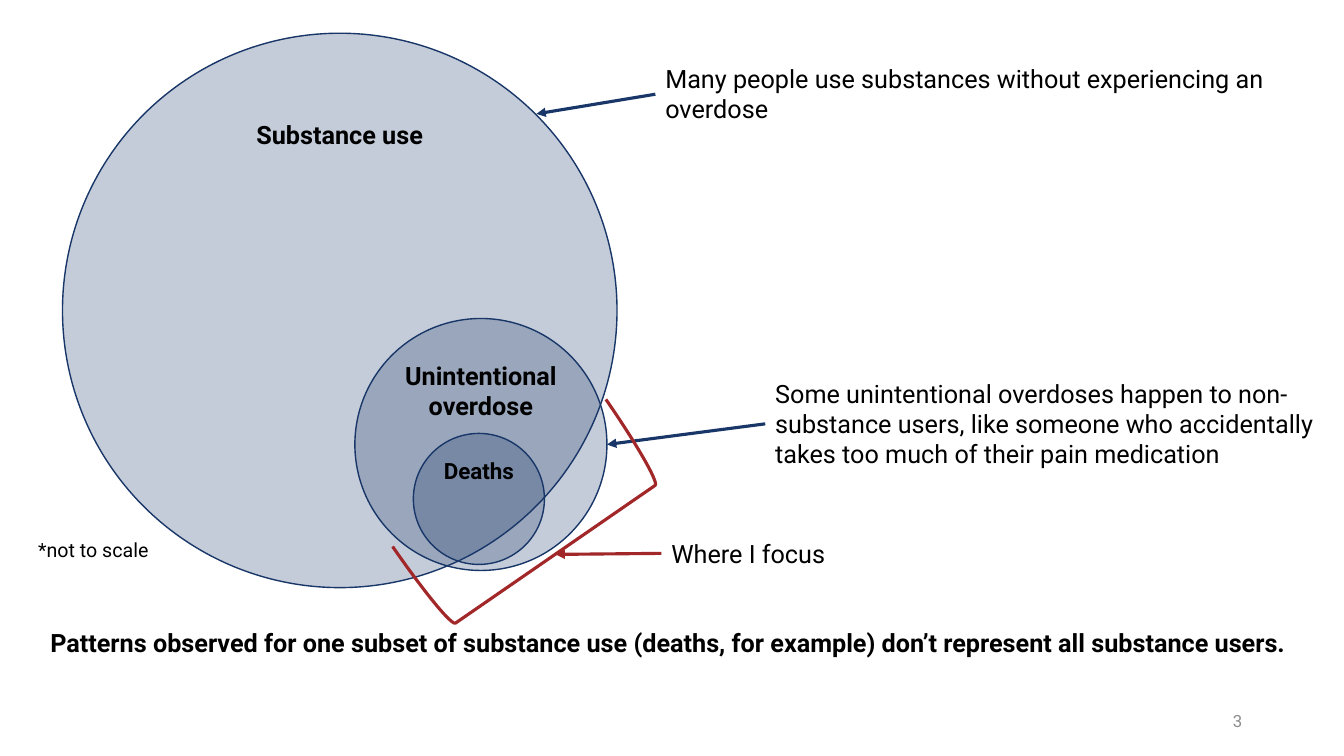
from lxml import etree
from pptx import Presentation
from pptx import util as u
from pptx.dml.color import RGBColor
from pptx.enum import shapes, text
from pptx.oxml import ns

PX = 9144  # EMU per px, 100 px to the inch
NAVY = RGBColor(0x18, 0x36, 0x68)
RED = RGBColor(0xA1, 0x27, 0x29)
BLACK = RGBColor(0, 0, 0)
GREY = RGBColor(0x8C, 0x8C, 0x8C)
FONT = "Roboto"


def px(*lengths):
    return [u.Emu(n * PX) for n in lengths]


def set_text(sp, words, size, bold=False, color=BLACK, align=text.PP_ALIGN.LEFT):
    tf = sp.text_frame
    tf.word_wrap = True
    tf.text = words
    p = tf.paragraphs[0]
    p.alignment = align
    font = p.runs[0].font
    font.name, font.size, font.bold = FONT, u.Pt(size), bold
    font.color.rgb = color


def add_label(slide, box, words, size=18, bold=False):
    sp = slide.shapes.add_textbox(*px(*box))
    set_text(sp, words, size, bold)
    sp.text_frame.auto_size = text.MSO_AUTO_SIZE.SHAPE_TO_FIT_TEXT
    return sp


def add_circle(slide, left, top, diameter, words, size):
    """Translucent circle named at its top, so overlaps darken."""
    sp = slide.shapes.add_shape(shapes.MSO_SHAPE.OVAL,
                                *px(left, top, diameter, diameter))
    sp.shadow.inherit = False
    sp.fill.solid()
    sp.fill.fore_color.rgb = NAVY
    color = sp.fill._xPr.find(".//" + ns.qn("a:srgbClr"))
    etree.SubElement(color, ns.qn("a:alpha"), val="25000")
    sp.line.color.rgb = NAVY
    sp.line.width = u.Pt(1)
    set_text(sp, words, size, True, align=text.PP_ALIGN.CENTER)
    sp.text_frame.vertical_anchor = text.MSO_ANCHOR.TOP


def add_callout(slide, box, words, target, color):
    """Note with an arrow from its left side to the target point."""
    note = add_label(slide, box, words)
    left, top, _, height = box
    line = slide.shapes.add_connector(shapes.MSO_CONNECTOR.STRAIGHT,
                                      *px(left, top + height // 2, *target))
    line.begin_connect(note, 1)
    line.line.color.rgb = color
    line.line.width = u.Pt(2.25)
    ln = line.line._get_or_add_ln()
    etree.SubElement(ln, ns.qn("a:tailEnd"), type="triangle")
    etree.SubElement(line._element.spPr, ns.qn("a:effectLst"))


def add_focus_bracket(slide, box):
    sp = slide.shapes.add_shape(shapes.MSO_SHAPE.LEFT_BRACKET, *px(*box))
    sp.rotation = 235.4
    sp.shadow.inherit = False
    sp.fill.background()
    sp.line.color.rgb = RED
    sp.line.width = u.Pt(2.25)


def add_circles(slide, left, top):
    for dx, dy, diameter, words, size in (
            (0, 0, 550, "Substance use", 18),
            (290, 283, 250, "Unintentional overdose", 18),
            (348, 397, 130, "Deaths", 16)):
        add_circle(slide, left + dx, top + dy, diameter, words, size)


def add_page_number(slide, box, number):
    sp = slide.shapes.add_textbox(*px(*box))
    set_text(sp, number, 12, color=GREY, align=text.PP_ALIGN.RIGHT)
    sp.text_frame.vertical_anchor = text.MSO_ANCHOR.MIDDLE


def build_overdose_slide(prs):
    slide = prs.slides.add_slide(prs.slide_layouts[6])
    add_page_number(slide, (942, 695, 300, 40), "3")
    add_circles(slide, 62, 33)
    add_callout(slide, (650, 58, 638, 71),
                "Many people use substances without experiencing an overdose",
                (532, 113), NAVY)
    add_callout(slide, (759, 370, 558, 101),
                "Some unintentional overdoses happen to non-substance users, "
                "like someone who accidentally takes too much of their pain "
                "medication", (602, 441), NAVY)
    add_label(slide, (28, 529, 135, 34), "*not to scale", 14)
    add_label(slide, (40, 617, 1281, 40),
              "Patterns observed for one subset of substance use (deaths, for "
              "example) don’t represent all substance users.", bold=True)
    add_focus_bracket(slide, (474, 381, 98, 257))
    add_callout(slide, (656, 529, 487, 40), "Where I focus", (551, 550), RED)


def main():
    prs = Presentation()
    prs.slide_width, prs.slide_height = px(1333, 750)
    build_overdose_slide(prs)
    prs.save("out.pptx")


if __name__ == "__main__":
    main()
